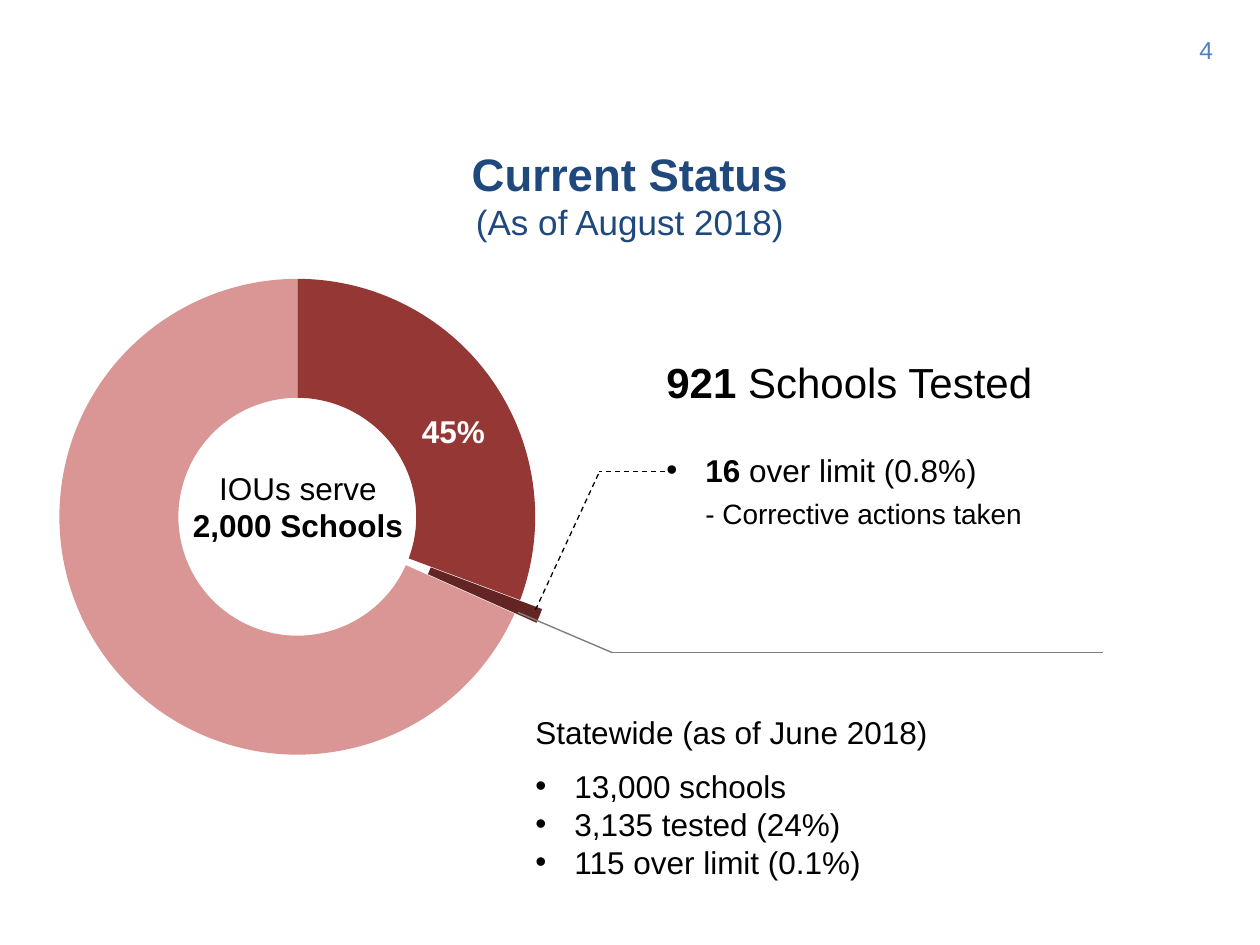
from lxml.etree import SubElement
from pptx import Presentation
from pptx.chart.data import CategoryChartData
from pptx.dml.color import RGBColor
from pptx.enum.chart import XL_CHART_TYPE
from pptx.enum.dml import MSO_LINE
from pptx.enum.shapes import MSO_CONNECTOR
from pptx.enum.text import MSO_ANCHOR, PP_ALIGN
from pptx.oxml import parse_xml
from pptx.oxml.ns import nsdecls, qn
from pptx.util import Inches, Pt

BLACK = RGBColor(0x00, 0x00, 0x00)
WHITE = RGBColor(0xFF, 0xFF, 0xFF)
GRAY = RGBColor(0x80, 0x80, 0x80)
NAVY = RGBColor(0x1F, 0x49, 0x7D)
BLUE = RGBColor(0x4F, 0x81, 0xBD)
RED = RGBColor(0x95, 0x37, 0x35)
MAROON = RGBColor(0x63, 0x25, 0x23)
PINK = RGBColor(0xD9, 0x96, 0x94)

FONT = "Arial"
INDENT = Inches(0.31)


def add_box(slide, left, top, width, height, anchor=MSO_ANCHOR.TOP):
    box = slide.shapes.add_textbox(
        Inches(left), Inches(top), Inches(width), Inches(height))
    frame = box.text_frame
    frame.word_wrap = True
    frame.vertical_anchor = anchor
    return frame


def add_para(frame, *parts, size=18, color=BLACK, align=None, gap=0,
             bullet=False, inset=False):
    """Add a paragraph of (text, bold) parts."""
    para = frame.paragraphs[0]
    if para.runs:
        para = frame.add_paragraph()
    if align is not None:
        para.alignment = align
    if gap:
        para.space_before = Pt(gap)
    if bullet or inset:
        props = para._p.get_or_add_pPr()
        props.set("marL", str(INDENT))
        if bullet:
            props.set("indent", str(-INDENT))
            SubElement(props, qn("a:buFont")).set("typeface", FONT)
            SubElement(props, qn("a:buChar")).set("char", "•")
    para.font.name = FONT
    para.font.size = Pt(size)
    para.font.color.rgb = color
    for text, bold in parts:
        run = para.add_run()
        run.text = text
        run.font.bold = bold


def add_line(slide, start, end, color, width, dash=None):
    line = slide.shapes.add_connector(
        MSO_CONNECTOR.STRAIGHT, *map(Inches, start + end))
    line.line.color.rgb = color
    line.line.width = Pt(width)
    if dash:
        line.line.dash_style = dash
    SubElement(line._element.spPr, qn("a:effectLst"))


def blast(value):
    return parse_xml(f'<c:explosion {nsdecls("c")} val="{value}"/>')


def add_ring(slide):
    data = CategoryChartData()
    data.categories = ["1", "2", "3"]
    data.add_series("Series 1", (31, 1, 69))
    wide, high, ring = 4.38, 4.14, 3.87
    chart = slide.shapes.add_chart(
        XL_CHART_TYPE.DOUGHNUT, Inches(0.17), Inches(2.03),
        Inches(wide), Inches(high), data).chart
    chart.has_title = False
    chart.has_legend = False
    chart.font.name = FONT
    chart.font.size = Pt(10)
    chart.font.color.rgb = BLACK
    plot = chart.plots[0]
    plot.vary_by_categories = True
    plot.has_data_labels = False

    # Slices: only the thin one is pulled out
    series = plot.series[0]
    for index, color in enumerate((RED, MAROON, PINK)):
        fill = series.points[index].format.fill
        fill.solid()
        fill.fore_color.rgb = color
    node = series._element
    node.find(qn("c:tx")).addnext(blast(5))
    for point, value in zip(node.findall(qn("c:dPt")), (0, 20, 0)):
        point.find(qn("c:idx")).addnext(blast(value))

    # Centre the ring in its frame
    area = chart._chartSpace.chart.plotArea
    old = area.find(qn("c:layout"))
    if old is not None:
        area.remove(old)
    w, h = ring / wide, ring / high
    area.insert(0, parse_xml(
        f'<c:layout {nsdecls("c")}><c:manualLayout>'
        '<c:layoutTarget val="inner"/>'
        '<c:xMode val="edge"/><c:yMode val="edge"/>'
        f'<c:x val="{(1 - w) / 2:.3f}"/><c:y val="{(1 - h) / 2:.3f}"/>'
        f'<c:w val="{w:.3f}"/><c:h val="{h:.3f}"/>'
        '</c:manualLayout></c:layout>'))


def main():
    deck = Presentation()
    deck.slide_width, deck.slide_height = Inches(10), Inches(7.5)
    slide = deck.slides.add_slide(deck.slide_layouts[6])

    # Ring and its labels
    add_ring(slide)
    core = add_box(slide, 1.3, 3.67, 2.13, 0.71)
    add_para(core, ("IOUs serve ", False), ("2,000 Schools", True),
             align=PP_ALIGN.CENTER)
    share = add_box(slide, 3.25, 3.22, 0.89, 0.4)
    add_para(share, ("45%", True), color=WHITE)

    # Leader lines
    add_line(slide, (8.75, 5.18), (4.85, 5.18), GRAY, 0.8)
    add_line(slide, (4.86, 5.18), (4.11, 4.86), GRAY, 0.8)
    add_line(slide, (4.25, 4.84), (4.75, 3.76), BLACK, 0.75, MSO_LINE.DASH)
    add_line(slide, (5.28, 3.74), (4.75, 3.74), BLACK, 0.75, MSO_LINE.DASH)

    # Test results
    tests = add_box(slide, 5.19, 2.78, 3.75, 1.51)
    add_para(tests, ("921", True), (" Schools Tested", False), size=24)
    add_para(tests, ("16", True), (" over limit (0.8%)", False),
             gap=25, bullet=True)
    add_para(tests, ("- Corrective actions taken", False),
             size=16, gap=4.6, inset=True)

    # Title
    title = add_box(slide, 0.5, 1.08, 9, 0.92, MSO_ANCHOR.MIDDLE)
    add_para(title, ("Current Status", True), size=26, color=NAVY,
             align=PP_ALIGN.CENTER)
    add_para(title, ("(As of August 2018)", False), size=20, color=NAVY,
             align=PP_ALIGN.CENTER)

    # Statewide figures
    state = add_box(slide, 4.15, 5.61, 3.75, 1.45)
    add_para(state, ("Statewide (as of June 2018)", False))
    facts = ("13,000 schools", "3,135 tested (24%)", "115 over limit (0.1%)")
    for index, fact in enumerate(facts):
        add_para(state, (fact, False), gap=0 if index else 9.2, bullet=True)

    # Page number
    page = add_box(slide, 9.42, 0.23, 0.58, 0.52)
    add_para(page, ("4", False), size=14, color=BLUE)

    deck.save("out.pptx")


if __name__ == "__main__":
    main()
